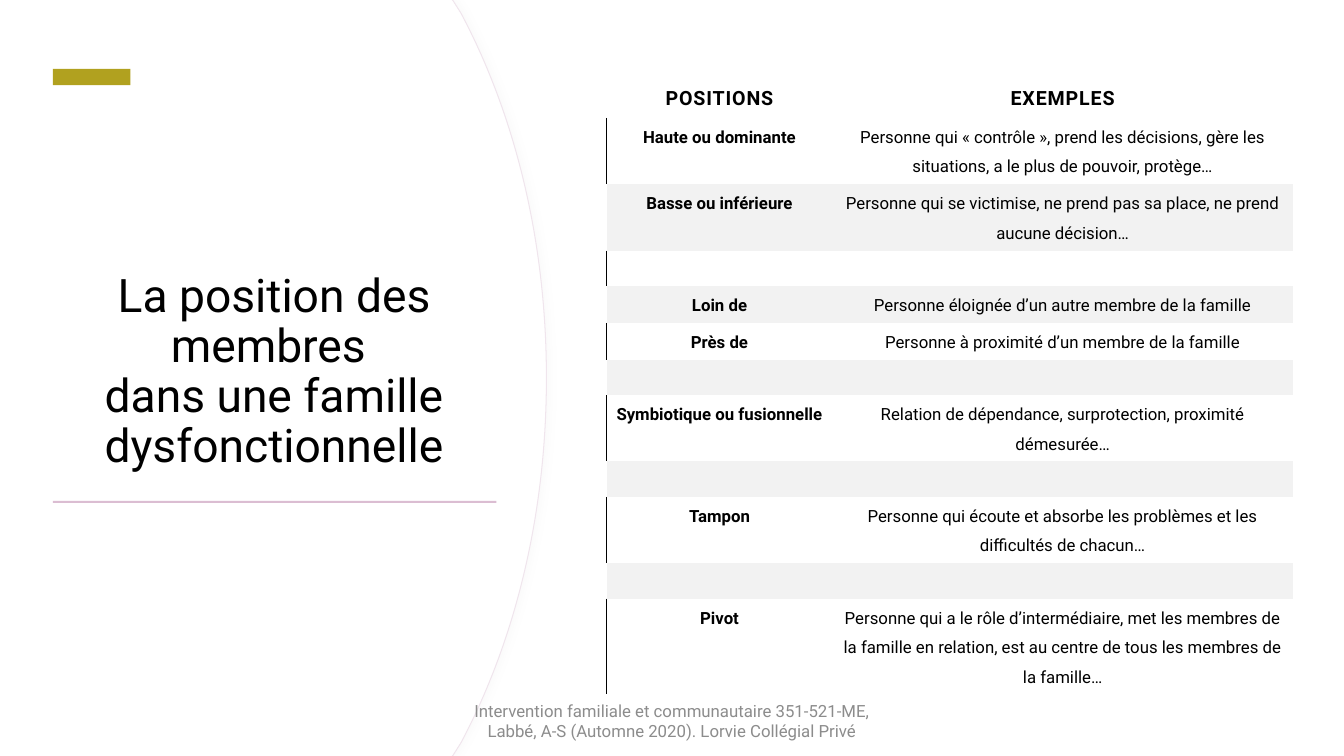
from dataclasses import dataclass

from lxml import etree
from pptx import Presentation
from pptx.dml.color import RGBColor
from pptx.enum import shapes, text
from pptx.oxml import ns
from pptx.util import Pt


@dataclass(frozen=True)
class Theme:
    font: str = "Roboto"
    black: str = "000000"
    white: str = "FFFFFF"
    band: str = "F2F2F2"
    accent: str = "B1A11F"
    rule: str = "DBBDD2"
    outline: str = "F0E5ED"
    shadow: str = "D9D9D9"
    footer: str = "8C8C8C"
    title_size: int = 33
    header_size: int = 14
    body_size: int = 12


THEME = Theme()
WIDTH, HEIGHT = 960, 540
NO_GRID_STYLE = "{2D5ABB26-0587-4C30-8999-92F81FD0307C}"
HEADER_HEIGHT = 26
HEIGHT_BY_LINES = {1: 25.3, 2: 46.2, 3: 67}
HEADERS = ("POSITIONS", "EXEMPLES")
POSITIONS = [
    ("Haute ou dominante", "Personne qui « contrôle », prend les décisions, gère les situations, "
     "a le plus de pouvoir, protège…", 2),
    ("Basse ou inférieure", "Personne qui se victimise, ne prend pas sa place, ne prend aucune décision…", 2),
    ("", "", 1),
    ("Loin de", "Personne éloignée d’un autre membre de la famille", 1),
    ("Près de", "Personne à proximité d’un membre de la famille", 1),
    ("", "", 1),
    ("Symbiotique ou fusionnelle", "Relation de dépendance, surprotection, proximité démesurée…", 2),
    ("", "", 1),
    ("Tampon", "Personne qui écoute et absorbe les problèmes et les difficultés de chacun…", 2),
    ("", "", 1),
    ("Pivot", "Personne qui a le rôle d’intermédiaire, met les membres de la famille en relation, "
     "est au centre de tous les membres de la famille…", 3),
]


def rgb(color):
    return RGBColor.from_string(color)


def add_xml(parent, tag, **attributes):
    return etree.SubElement(parent, ns.qn(tag), attributes)


def write(frame, content, size, color=THEME.black, bold=False, spacing=None):
    frame.text = content
    frame.word_wrap = True
    paragraph = frame.paragraphs[0]
    paragraph.alignment = text.PP_ALIGN.CENTER
    paragraph.line_spacing = spacing
    paragraph.font.name = THEME.font
    paragraph.font.size = Pt(size)
    paragraph.font.bold = bold
    paragraph.font.color.rgb = rgb(color)
    return paragraph


def add_bar(slide, left, top, width, height, color, rotation=0):
    shape = slide.shapes.add_shape(shapes.MSO_SHAPE.RECTANGLE, Pt(left), Pt(top), Pt(width), Pt(height))
    shape.rotation = rotation
    shape.shadow.inherit = False
    shape.fill.solid()
    shape.fill.fore_color.rgb = rgb(color)
    shape.line.fill.background()


def bend(segment, controls):
    segment.tag = ns.qn("a:cubicBezTo")
    for index, (x, y) in enumerate(controls):
        point = etree.Element(ns.qn("a:pt"), x=str(Pt(x)), y=str(Pt(y)))
        segment.insert(index, point)


def add_curved_panel(slide, right):
    edge, shoulder, control = right - 67, right - 61, right - 22.5
    middle = HEIGHT / 2
    corners = [(edge, 0), (shoulder, 9.5), (right, middle), (shoulder, HEIGHT - 9.5), (edge, HEIGHT), (0, HEIGHT)]
    builder = slide.shapes.build_freeform(0, 0)
    builder.add_line_segments([(Pt(x), Pt(y)) for x, y in corners])
    panel = builder.convert_to_shape()
    segments = list(panel.element.iter(ns.qn("a:lnTo")))
    bend(segments[2], [(control, 82), (right, 172)])
    bend(segments[3], [(right, HEIGHT - 172), (control, HEIGHT - 82)])
    panel.shadow.inherit = False
    panel.fill.solid()
    panel.fill.fore_color.rgb = rgb(THEME.white)
    panel.line.fill.background()
    return panel


def outline_panel(panel):
    panel.line.color.rgb = rgb(THEME.outline)
    panel.line.width = Pt(0.75)
    effects = panel.element.spPr.find(ns.qn("a:effectLst"))
    shadow = add_xml(effects, "a:outerShdw", blurRad=str(Pt(4)), dist=str(Pt(3)), dir="0")
    color = add_xml(shadow, "a:srgbClr", val=THEME.shadow)
    add_xml(color, "a:alpha", val="10000")


def add_title(slide, content):
    title = slide.shapes.title
    title.left, title.top, title.width, title.height = Pt(37.4), Pt(88.8), Pt(316.8), Pt(252)
    write(title.text_frame, content, THEME.title_size, spacing=0.9)
    title.text_frame.vertical_anchor = text.MSO_ANCHOR.BOTTOM
    title.text_frame.auto_size = text.MSO_AUTO_SIZE.NONE
    slide.shapes.element.append(title.element)


def add_left_border(cell):
    properties = cell._tc.get_or_add_tcPr()
    line = etree.Element(ns.qn("a:lnL"), w=str(Pt(1)))
    add_xml(add_xml(line, "a:solidFill"), "a:srgbClr", val=THEME.black)
    properties.insert(0, line)


def fill_cell(cell, content, size, bold, top_margin):
    cell.margin_left = cell.margin_right = Pt(3.6)
    cell.margin_top, cell.margin_bottom = Pt(top_margin), Pt(5.2)
    return write(cell.text_frame, content, size, bold=bold, spacing=1.5)


def add_positions_table(slide):
    heights = [HEADER_HEIGHT] + [HEIGHT_BY_LINES[lines] for _, _, lines in POSITIONS]
    frame = slide.shapes.add_table(len(heights), 2, Pt(433.3), Pt(49), Pt(490.3), Pt(sum(heights)))
    table = frame.table
    table.first_row = table.horz_banding = False
    table._tbl.tblPr.find(ns.qn("a:tableStyleId")).text = NO_GRID_STYLE
    for column, width in zip(table.columns, (161.3, 329)):
        column.width = Pt(width)
    for row, height in zip(table.rows, heights):
        row.height = Pt(height)

    for cell, header in zip(table.rows[0].cells, HEADERS):
        paragraph = fill_cell(cell, header, THEME.header_size, True, 5.2)
        paragraph.font._element.set("spc", "60")
        cell.vertical_anchor = text.MSO_ANCHOR.BOTTOM
        cell.fill.background()

    for number, (position, example, _) in enumerate(POSITIONS, 1):
        banded = number % 2 == 0
        for column, content in enumerate((position, example)):
            cell = table.cell(number, column)
            fill_cell(cell, content, THEME.body_size, column == 0, 0)
            if banded:
                cell.fill.solid()
                cell.fill.fore_color.rgb = rgb(THEME.band)
            else:
                cell.fill.background()
        if not banded:
            add_left_border(table.cell(number, 0))


def add_footer(slide, content):
    box = slide.shapes.add_textbox(Pt(318), Pt(500.5), Pt(324), Pt(28.8))
    write(box.text_frame, content, THEME.body_size, THEME.footer)
    box.text_frame.vertical_anchor = text.MSO_ANCHOR.MIDDLE


def main():
    presentation = Presentation()
    presentation.slide_width, presentation.slide_height = Pt(WIDTH), Pt(HEIGHT)
    slide = presentation.slides.add_slide(presentation.slide_layouts[5])
    outline_panel(add_curved_panel(slide, 390.3))
    add_curved_panel(slide, 389.5)
    add_title(slide, "La position des membres \vdans une famille dysfonctionnelle")
    add_bar(slide, 59.7, 27.3, 11.5, 55.5, THEME.accent, rotation=90)
    add_bar(slide, 37.8, 357.8, 316.8, 1.4, THEME.rule)
    add_positions_table(slide)
    add_footer(slide, "Intervention familiale et communautaire 351-521-ME, "
                      "Labbé, A-S (Automne 2020). Lorvie Collégial Privé")
    presentation.save("out.pptx")


if __name__ == "__main__":
    main()
